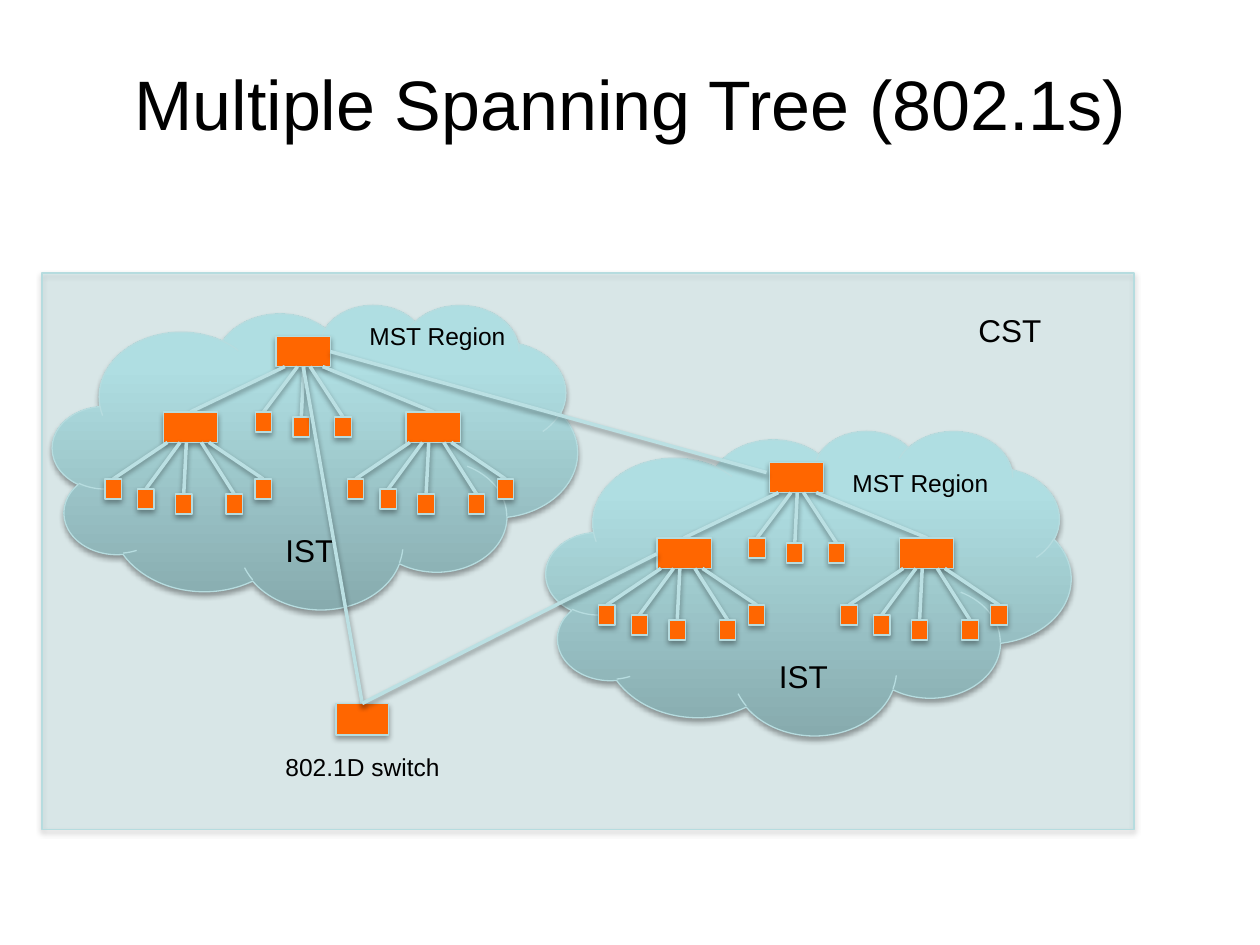
from copy import deepcopy
from dataclasses import dataclass
from typing import NamedTuple

from lxml.etree import SubElement
from pptx import Presentation
from pptx.dml.color import RGBColor
from pptx.enum.shapes import MSO_CONNECTOR, MSO_SHAPE
from pptx.enum.text import MSO_ANCHOR, MSO_AUTO_SIZE, PP_ALIGN
from pptx.oxml.ns import qn
from pptx.util import Pt


@dataclass(frozen=True)
class Theme:
    font: str = "Arial"
    text: str = "000000"
    switch: str = "FF6600"
    domain: str = "72BFC5"
    domain_alpha: int = 18
    outline: str = "B6DCDF"
    link: str = "BBE0E3"
    cloud: tuple = ((0, "87ABAE"), (0.8, "AFDEE2"), (1, "AFE0E4"))
    title_size: float = 40
    name_size: float = 18
    label_size: float = 14
    outline_width: float = 0.75
    link_width: float = 2


class Box(NamedTuple):
    left: float
    top: float
    width: float
    height: float

    def lengths(self) -> list:
        return [Pt(value) for value in self]


class Branch(NamedTuple):
    """A link from a switch's lower edge to a node, relative to the switch."""
    start: float
    end: float
    drop: float


@dataclass(frozen=True)
class Region:
    left: float
    top: float
    label: tuple
    ist: tuple


THEME = Theme()
SWITCH_W, SWITCH_H = 31, 17.3
LEAF_W, LEAF_H = 9.4, 11.5
ROOT_AT = (127.8, 18.2)
ACCESS_AT = ((63.5, 61.5), (202, 61.5))
ROOT_LEAVES = (Branch(12.2, -7.2, 43.2), Branch(15.8, 14.4, 46.1),
               Branch(19.4, 38.2, 46.1))
ROOT_UPLINKS = (Branch(26.6, 90, 43.2), Branch(5, -49, 43.2))
ACCESS_LEAVES = (Branch(9.4, -10.1, 43.9), Branch(13, 11.5, 46.8),
                 Branch(21.6, 40.3, 46.8), Branch(25.9, 56.9, 38.2),
                 Branch(2.2, -28.8, 38.2))
REGIONS = (Region(30, 174, (204, 180), (156, 300)),
           Region(312, 246, (480, 264), (438, 372)))


def color(value: str) -> RGBColor:
    return RGBColor.from_string(value)


def add_shadow(effects, alpha: int, distance: float) -> None:
    shadow = SubElement(effects, qn("a:outerShdw"), blurRad=str(Pt(3.15)),
                        dist=str(Pt(distance)), dir="5400000", rotWithShape="0")
    black = SubElement(shadow, qn("a:srgbClr"), val="000000")
    SubElement(black, qn("a:alpha"), val=str(alpha * 1000))


def add_block(shapes, box: Box, fill: str, kind=MSO_SHAPE.RECTANGLE):
    block = shapes.add_shape(kind, *box.lengths())
    block.fill.solid()
    block.fill.fore_color.rgb = color(fill)
    block.line.color.rgb = color(THEME.outline)
    block.line.width = Pt(THEME.outline_width)
    block.shadow.inherit = False
    add_shadow(block._element.spPr.find(qn("a:effectLst")), 35, 1.8)
    return block


def add_link(shapes, start: tuple, end: tuple) -> None:
    ends = [Pt(value) for value in (*start, *end)]
    link = shapes.add_connector(MSO_CONNECTOR.STRAIGHT, *ends)
    link.line.color.rgb = color(THEME.link)
    link.line.width = Pt(THEME.link_width)
    add_shadow(SubElement(link._element.spPr, qn("a:effectLst")), 38, 1.6)


def style_text(frame, size: float) -> None:
    for run in frame.paragraphs[0].runs:
        run.font.name = THEME.font
        run.font.size = Pt(size)
        run.font.color.rgb = color(THEME.text)


def add_label(shapes, text: str, box: Box, size: float) -> None:
    frame = shapes.add_textbox(*box.lengths()).text_frame
    frame.text = text
    frame.word_wrap = False
    frame.auto_size = MSO_AUTO_SIZE.SHAPE_TO_FIT_TEXT
    style_text(frame, size)


def add_cloud(shapes, box: Box) -> None:
    cloud = add_block(shapes, box, THEME.switch, MSO_SHAPE.CLOUD)
    cloud.fill.gradient()
    cloud.fill.gradient_angle = 90
    stops = cloud._element.spPr.find(qn("a:gradFill")).find(qn("a:gsLst"))
    stops.append(deepcopy(stops[0]))
    for stop, (position, value) in zip(cloud.fill.gradient_stops, THEME.cloud):
        stop.position = position
        stop.color.rgb = color(value)


def add_branches(shapes, left: float, top: float, branches: tuple) -> None:
    for branch in branches:
        add_link(shapes, (left + branch.end, top + branch.drop),
                 (left + branch.start, top + SWITCH_H))


def add_leaves(shapes, left: float, top: float, branches: tuple) -> None:
    add_branches(shapes, left, top, branches)
    for branch in branches:
        leaf = Box(left + branch.end - LEAF_W / 2, top + branch.drop,
                   LEAF_W, LEAF_H)
        add_block(shapes, leaf, THEME.switch)


def add_switch(shapes, left: float, top: float) -> None:
    add_block(shapes, Box(left, top, SWITCH_W, SWITCH_H), THEME.switch)


def add_region(slide, region: Region) -> None:
    shapes = slide.shapes.add_group_shape().shapes
    add_cloud(shapes, Box(region.left, region.top, 300, 174))

    # Root switch with its own leaves and the links to the access switches
    root = (region.left + ROOT_AT[0], region.top + ROOT_AT[1])
    add_switch(shapes, *root)
    add_leaves(shapes, *root, ROOT_LEAVES)
    add_branches(shapes, *root, ROOT_UPLINKS)

    # Access switches
    for x, y in ACCESS_AT:
        access = (region.left + x, region.top + y)
        add_switch(shapes, *access)
        add_leaves(shapes, *access, ACCESS_LEAVES)

    add_label(shapes, "MST Region", Box(*region.label, 93, 24.5), THEME.label_size)
    add_label(shapes, "IST", Box(*region.ist, 43, 29), THEME.name_size)


def main() -> None:
    deck = Presentation()
    deck.slide_width, deck.slide_height = Pt(720), Pt(540)
    slide = deck.slides.add_slide(deck.slide_layouts[5])
    shapes = slide.shapes

    # Title
    title = shapes.title
    title.left, title.top, title.width, title.height = Box(36, 21.6, 648, 74.2).lengths()
    title.text_frame.text = "Multiple Spanning Tree (802.1s)"
    title.text_frame.vertical_anchor = MSO_ANCHOR.MIDDLE
    title.text_frame.paragraphs[0].alignment = PP_ALIGN.CENTER
    style_text(title.text_frame, THEME.title_size)

    # Common spanning tree area
    cst = add_block(shapes, Box(24, 156, 624, 318), THEME.domain)
    tint = cst._element.spPr.find(qn("a:solidFill"))[0]
    SubElement(tint, qn("a:alpha"), val=str(THEME.domain_alpha * 1000))
    add_label(shapes, "CST", Box(552, 174, 51, 29), THEME.name_size)

    for region in REGIONS:
        add_region(slide, region)

    # Links between the regions and the 802.1D switch
    add_link(shapes, (188.8, 200.9), (438, 270))
    add_block(shapes, Box(192, 402, 30, 18), THEME.switch)
    for end in ((173.3, 209.5), (375.3, 316.5)):
        add_link(shapes, (207, 402), end)
    add_label(shapes, "802.1D switch", Box(156, 426, 104, 24.5), THEME.label_size)

    deck.save("out.pptx")


if __name__ == "__main__":
    main()
